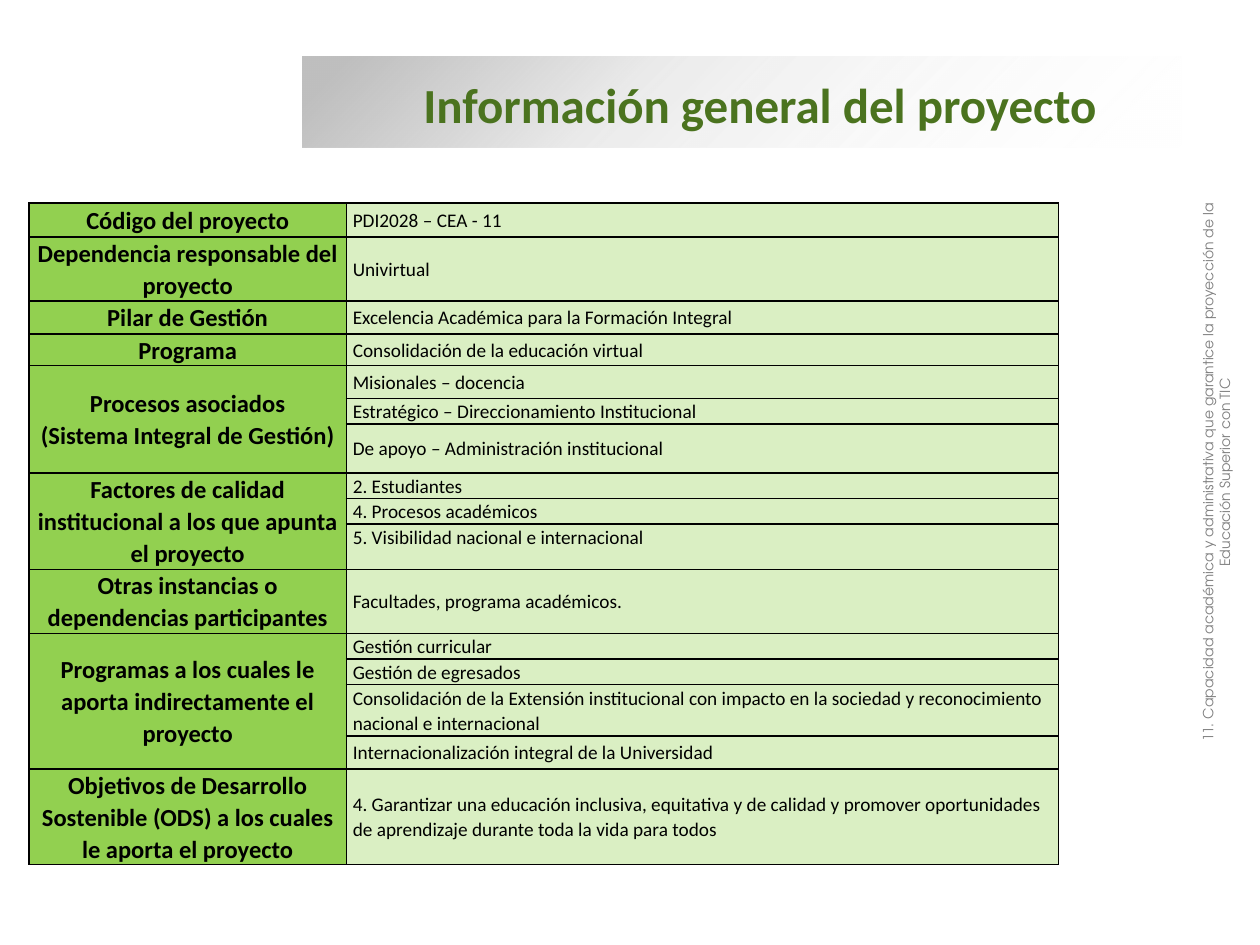
"""Builds the slide with the general information of the project."""
from lxml import etree
from pptx import Presentation
from pptx import util as u
from pptx.dml.color import RGBColor
from pptx.enum import shapes, text
from pptx.oxml import parse_xml
from pptx.oxml.ns import nsdecls, qn

COLORS = {"label": "92D050", "value": "DAEFC3", "ink": "000000", "title": "4B731F",
          "note": "808080", "band": "BFBFBF", "paper": "FFFFFF"}
SECTIONS = [
    ("Código del proyecto", [("PDI2028 – CEA - 11", 0.27)]),
    ("Dependencia responsable del proyecto", [("Univirtual", 0.51)]),
    ("Pilar de Gestión", [("Excelencia Académica para la Formación Integral", 0.26)]),
    ("Programa", [("Consolidación de la educación virtual", 0.25)]),
    ("Procesos asociados\v(Sistema Integral de Gestión)", [
        ("Misionales – docencia", 0.26),
        ("Estratégico – Direccionamiento Institucional", 0.2),
        ("De apoyo – Administración institucional", 0.39)]),
    ("Factores de calidad institucional a los que apunta el proyecto", [
        ("2. Estudiantes", 0.2),
        ("4. Procesos académicos", 0.2),
        ("5. Visibilidad nacional e internacional", 0.36)]),
    ("Otras instancias o dependencias participantes", [
        ("Facultades, programa académicos.", 0.51)]),
    ("Programas a los cuales le aporta indirectamente el proyecto", [
        ("Gestión curricular", 0.2),
        ("Gestión de egresados", 0.2),
        ("Consolidación de la Extensión institucional con impacto en la sociedad "
         "y reconocimiento nacional e internacional", 0.41),
        ("Internacionalización integral de la Universidad", 0.26)]),
    ("Objetivos de Desarrollo Sostenible (ODS) a los cuales le aporta el proyecto", [
        ("4. Garantizar una educación inclusiva, equitativa y de calidad y promover "
         "oportunidades de aprendizaje durante toda la vida para todos", 0.76)]),
]
TOP_ANCHORED = {"4. Procesos académicos", "5. Visibilidad nacional e internacional"}


class SlideBuilder:
    def __init__(self, slide, font="Calibri"):
        self.slide = slide
        self.font = font

    def set_text(self, frame, content, size, color, bold=False,
                 align=text.PP_ALIGN.LEFT, font=None):
        frame.word_wrap = True
        paragraph = frame.paragraphs[0]
        paragraph.text = content
        paragraph.alignment = align
        for run in paragraph.runs:
            run.font.name = font or self.font
            run.font.size = u.Pt(size)
            run.font.bold = bold
            run.font.color.rgb = RGBColor.from_string(COLORS[color])
        return paragraph

    def title(self, content, left, top, width, height):
        shape = self.slide.shapes.title
        shape.left, shape.top = u.Inches(left), u.Inches(top)
        shape.width, shape.height = u.Inches(width), u.Inches(height)
        shape.text_frame.vertical_anchor = text.MSO_ANCHOR.MIDDLE
        shape.text_frame.auto_size = text.MSO_AUTO_SIZE.NONE
        self.set_text(shape.text_frame, content, 28, "title", bold=True)

    def band(self, *box):
        shape = self.slide.shapes.add_shape(
            shapes.MSO_SHAPE.RECTANGLE, *(u.Inches(length) for length in box))
        shape.shadow.inherit = False
        shape.line.fill.background()
        shape.fill.gradient()
        shape.fill.gradient_angle = 315
        stops = shape._element.spPr.find(qn("a:gradFill")).find(qn("a:gsLst"))
        for stop in list(stops):
            stops.remove(stop)
        for position, color, alpha in ((5, "band", 100), (37, "band", 31), (100, "paper", 0)):
            stop = etree.SubElement(stops, qn("a:gs"), pos=str(position * 1000))
            fill = etree.SubElement(stop, qn("a:srgbClr"), val=COLORS[color])
            etree.SubElement(fill, qn("a:alpha"), val=str(alpha * 1000))
        tree = self.slide.shapes._spTree
        tree.remove(shape._element)
        tree.insert(2, shape._element)

    def side_note(self, content, *box):
        shape = self.slide.shapes.add_textbox(*(u.Inches(length) for length in box))
        shape.rotation = 270
        self.set_text(shape.text_frame, content, 8, "note",
                      align=text.PP_ALIGN.CENTER, font="TeX Gyre Adventor")

    def cell(self, cell, fill, margin):
        cell.margin_left = cell.margin_right = u.Inches(margin)
        cell.margin_top = cell.margin_bottom = 0
        cell.vertical_anchor = text.MSO_ANCHOR.MIDDLE
        properties = cell._tc.get_or_add_tcPr()
        for side in "LRTB":
            properties.append(parse_xml(
                f'<a:ln{side} {nsdecls("a")} w="12700"><a:solidFill>'
                f'<a:srgbClr val="{COLORS["ink"]}"/></a:solidFill></a:ln{side}>'))
        cell.fill.solid()
        cell.fill.fore_color.rgb = RGBColor.from_string(COLORS[fill])

    def table(self, sections, left, top, widths):
        heights = [height for _, values in sections for _, height in values]
        table = self.slide.shapes.add_table(
            len(heights), len(widths), u.Inches(left), u.Inches(top),
            u.Inches(sum(widths)), u.Inches(sum(heights))).table
        for column, width in zip(table.columns, widths):
            column.width = u.Inches(width)
        for row, height in zip(table.rows, heights):
            row.height = u.Inches(height)
            self.cell(row.cells[0], "label", 0.04)
            self.cell(row.cells[1], "value", 0.05)
        first = 0
        for label, values in sections:
            head = table.cell(first, 0)
            if len(values) > 1:
                head.merge(table.cell(first + len(values) - 1, 0))
            self.set_text(head.text_frame, label, 14, "ink", bold=True,
                          align=text.PP_ALIGN.CENTER).line_spacing = 1.07
            for index, (value, _) in enumerate(values, first):
                cell = table.cell(index, 1)
                self.set_text(cell.text_frame, value, 11, "ink").line_spacing = 1.07
                if value in TOP_ANCHORED:
                    cell.vertical_anchor = text.MSO_ANCHOR.TOP
            first += len(values)


def main():
    presentation = Presentation()
    presentation.slide_width, presentation.slide_height = u.Inches(10), u.Inches(7.5)
    builder = SlideBuilder(presentation.slides.add_slide(presentation.slide_layouts[5]))
    builder.band(2.4, 0.45, 6.98, 0.72)
    builder.title("Información general del proyecto", 3.26, 0.54, 6.2, 0.57)
    builder.table(SECTIONS, 0.23, 1.61, (2.52, 5.65))
    builder.side_note("11. Capacidad académica y administrativa que garantice la proyección "
                      "de la Educación Superior con TIC", 7.3, 3.5, 4.84, 0.5)
    presentation.save("out.pptx")


if __name__ == "__main__":
    main()
